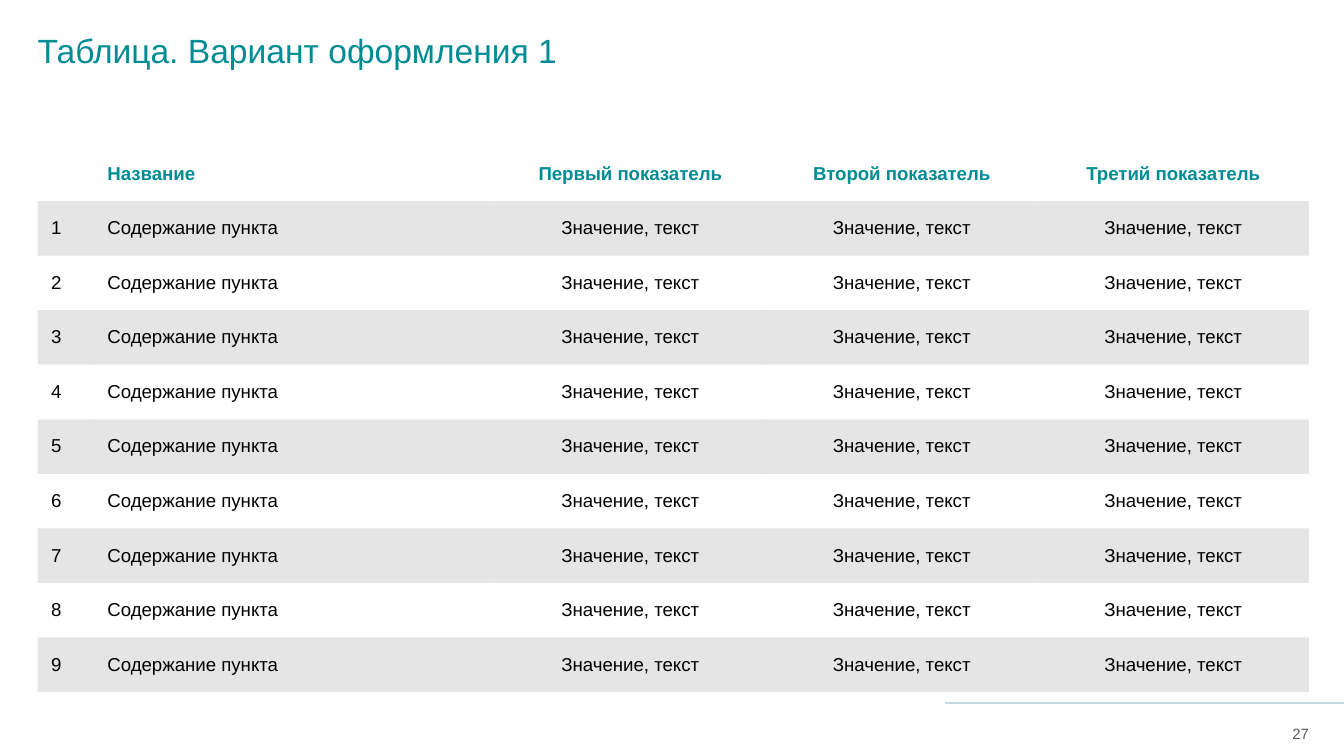
from lxml import etree
from pptx import Presentation
from pptx.dml.color import RGBColor
from pptx.enum.shapes import MSO_CONNECTOR
from pptx.enum.text import MSO_ANCHOR as ANCHOR, MSO_AUTO_SIZE, PP_ALIGN as ALIGN
from pptx.oxml.ns import qn
from pptx.util import Inches, Pt

TEAL = "008C95"
NO_STYLE = "{2D5ABB26-0587-4C30-8999-92F81FD0307C}"


def color(value):
    return RGBColor.from_string(value)


def write(tf, text, size=10, fill="000000", bold=False, align=ALIGN.LEFT):
    p = tf.paragraphs[0]
    p.alignment = align
    r = p.add_run()
    r.text = text
    r.font.name = "Arial"
    r.font.size = Pt(size)
    r.font.bold = bold
    r.font.color.rgb = color(fill)


# Widescreen page, 16:9
prs = Presentation()
prs.slide_width = Inches(10)
prs.slide_height = Inches(10) * 9 // 16
s = prs.slides.add_slide(prs.slide_layouts[5])

# Footer line
line = s.shapes.add_connector(MSO_CONNECTOR.STRAIGHT, Inches(7.03), Inches(5.23),
                              Inches(10), Inches(5.23))
line.line.color.rgb = color("C0DADE")
line.line.width = Pt(0.75)
etree.SubElement(line._element.spPr, qn("a:effectLst"))

# Title and page number
title = s.shapes.title
title.left, title.top = Inches(0.28), Inches(0.22)
title.width, title.height = Inches(9.44), Inches(0.58)
number = s.shapes.add_textbox(Inches(9.42), Inches(5.36), Inches(0.32), Inches(0.19))
for sp, anchor in ((title, ANCHOR.TOP), (number, ANCHOR.MIDDLE)):
    tf = sp.text_frame
    tf.margin_left = tf.margin_right = tf.margin_top = tf.margin_bottom = 0
    tf.vertical_anchor = anchor
    tf.auto_size = MSO_AUTO_SIZE.NONE
    tf.word_wrap = True
write(title.text_frame, "Таблица. Вариант оформления 1", size=18, fill=TEAL)
write(number.text_frame, "27", size=8, fill="595959", align=ALIGN.RIGHT)

# Table rows: a header and nine numbered items
rows = [["", "Название", "Первый показатель", "Второй показатель", "Третий показатель"]]
rows += [[str(i), "Содержание пункта"] + ["Значение, текст"] * 3 for i in range(1, 10)]
widths = [0.42, 2.98, 2.02, 2.02, 2.02]

frame = s.shapes.add_table(len(rows), len(widths), Inches(0.28), Inches(1.09),
                           Inches(9.46), Inches(4.06))
table = frame.table
table._tbl.tblPr.find(qn("a:tableStyleId")).text = NO_STYLE
table.horz_banding = False
for column, width in zip(table.columns, widths):
    column.width = Inches(width)

for i, row in enumerate(rows):
    for j, text in enumerate(row):
        cell = table.cell(i, j)
        cell.vertical_anchor = ANCHOR.MIDDLE
        if text:
            write(cell.text_frame, text, fill="000000" if i else TEAL, bold=i == 0,
                  align=ALIGN.CENTER if j > 1 else ALIGN.LEFT)
        # Odd rows are shaded with 20 % grey
        if i % 2:
            cell.fill.solid()
            cell.fill.fore_color.rgb = color("808080")
            shade = cell._tc.tcPr.find(".//" + qn("a:srgbClr"))
            etree.SubElement(shade, qn("a:alpha"), val="20000")
        else:
            cell.fill.background()

prs.save("out.pptx")
